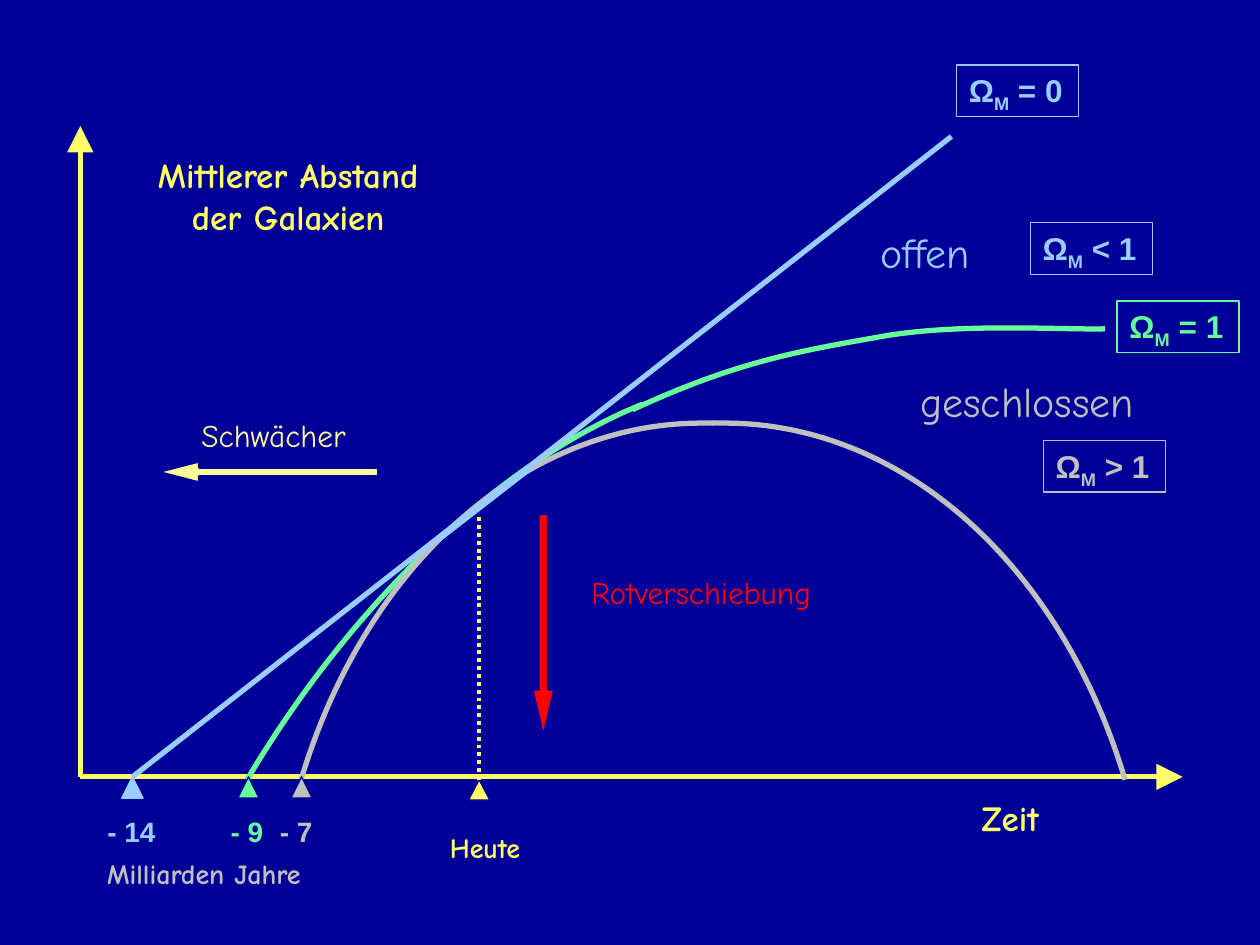
from lxml.etree import SubElement
from pptx import Presentation
from pptx.dml.color import RGBColor
from pptx.enum.dml import MSO_LINE
from pptx.enum.shapes import MSO_CONNECTOR, MSO_SHAPE
from pptx.enum.text import MSO_ANCHOR, MSO_AUTO_SIZE, PP_ALIGN
from pptx.oxml.ns import qn
from pptx.util import Cm, Pt

NAVY = RGBColor(0x00, 0x00, 0x99)
YELLOW = RGBColor(0xFF, 0xFF, 0x66)
PALE = RGBColor(0xFF, 0xFF, 0x99)
RED = RGBColor(0xFF, 0x00, 0x00)
GREEN = RGBColor(0x66, 0xFF, 0x99)
GRAY = RGBColor(0xC0, 0xC0, 0xC0)
BLUE = RGBColor(0x99, 0xCC, 0xFF)

# All lengths are in centimetres.
LEFT, BASE = 1.62, 15.66
TODAY = 9.66
MARK = 0.43

# text, box, colour, size, bold, centred, wrapped
LABELS = [
    ("Mittlerer Abstand der Galaxien", (2.33, 2.97, 6.96, 1.96), YELLOW, 20, True, True, True),
    ("Heute", (8.82, 16.61, 2.13, 0.94), YELLOW, 16, True, False, False),
    ("Schwächer", (3.81, 8.26, 3.76, 1.02), PALE, 18, False, False, False),
    ("Rotverschiebung", (11.43, 11.43, 5.41, 1.02), RED, 18, False, True, False),
    ("Zeit", (19.4, 15.94, 1.93, 1.09), YELLOW, 20, True, True, False),
    ("geschlossen", (18.3, 7.44, 5.21, 1.3), GRAY, 24, False, False, False),
    ("offen", (17.5, 4.45, 2.74, 1.3), BLUE, 24, False, False, False),
    ("Milliarden Jahre", (1.91, 17.15, 5.03, 0.94), GRAY, 16, True, False, False),
]
# relation, left, top, colour
OMEGAS = [
    (" = 1", 22.52, 6.07, GREEN),
    (" > 1", 21.03, 8.88, GRAY),
    (" < 1", 20.77, 4.49, BLUE),
    (" = 0", 19.28, 1.31, BLUE),
]
# Each curve: a start, then two controls and an end for every arc
CURVES = [
    (GREEN, [(12.75, 8.26), (14.78, 7.32), (16.03, 7.09), (17.63, 6.81),
             (19.23, 6.5), (21.31, 6.65), (22.28, 6.63)]),
    (GREEN, [(12.95, 8.15), (10.11, 9.3), (7.14, 12.09), (4.98, 15.72)]),
    (GRAY, [(14.38, 8.53), (14.3, 8.53), (14.22, 8.53), (14.15, 8.53),
            (10.57, 8.53), (7.37, 11.38), (6.07, 15.72)]),
    (GRAY, [(14.35, 8.53), (14.43, 8.53), (14.53, 8.53), (14.61, 8.53),
            (18.19, 8.53), (21.39, 11.38), (22.68, 15.72)]),
]
# age, mark centre, label centre, label width, colour, outline
AGES = [
    ("- 14", 2.67, 2.65, 1.5, BLUE, BLUE),
    ("- 9", 5.01, 4.98, 1.17, GREEN, NAVY),
    ("- 7", 6.08, 5.97, 1.17, GRAY, NAVY),
]


def write(shape, text, color, size=18, font="Comic Neue", bold=False,
          center=False, wrap=False, sub=None):
    """Fill a shape with runs; the run equal to sub is set as a subscript."""
    frame = shape.text_frame
    frame.word_wrap = wrap
    frame.auto_size = MSO_AUTO_SIZE.SHAPE_TO_FIT_TEXT
    frame.vertical_anchor = MSO_ANCHOR.TOP
    para = frame.paragraphs[0]
    para.alignment = PP_ALIGN.CENTER if center else PP_ALIGN.LEFT
    for part in [text] if isinstance(text, str) else text:
        run = para.add_run()
        run.text = part
        run.font.name, run.font.size, run.font.bold = font, Pt(size), bold
        run.font.color.rgb = color
        if part == sub:
            run.font._element.set("baseline", "-25000")


def add_label(slide, text, box, color, **style):
    write(slide.shapes.add_textbox(*map(Cm, box)), text, color, **style)


def dress(form, fill, edge, width):
    form.shadow.inherit = False
    if fill is None:
        form.fill.background()
    else:
        form.fill.solid()
        form.fill.fore_color.rgb = fill
    form.line.color.rgb = edge
    form.line.width = Pt(width)
    return form


def add_form(slide, kind, box, fill, edge, width=0.75):
    return dress(slide.shapes.add_shape(kind, *map(Cm, box)), fill, edge, width)


def add_line(slide, start, end, color, width=3, dash=None, arrow=False):
    line = slide.shapes.add_connector(MSO_CONNECTOR.STRAIGHT, *map(Cm, start + end))
    line.line.color.rgb = color
    line.line.width = Pt(width)
    if dash:
        line.line.dash_style = dash
    if arrow:
        SubElement(line.line._get_or_add_ln(), qn("a:tailEnd"),
                   type="triangle", w="lg", len="lg")
    SubElement(line._element.spPr, qn("a:effectLst"))


def add_curve(slide, color, knots):
    """Draw the knots as a freeform and turn each three legs into one cubic arc."""
    pen = slide.shapes.build_freeform(*map(Cm, knots[0]))
    pen.add_line_segments([tuple(map(Cm, knot)) for knot in knots[1:]], close=False)
    curve = dress(pen.convert_to_shape(), None, color, 3)
    trace = next(curve._element.iter(qn("a:moveTo"))).getparent()
    legs = trace.findall(qn("a:lnTo"))
    for i in range(0, len(legs), 3):
        arc = SubElement(trace, qn("a:cubicBezTo"))
        for leg in legs[i:i + 3]:
            arc.append(leg[0])
            trace.remove(leg)


def main():
    deck = Presentation()
    deck.slide_width, deck.slide_height = Cm(25.4), Cm(19.05)
    slide = deck.slides.add_slide(deck.slide_layouts[6])
    slide.background.fill.solid()
    slide.background.fill.fore_color.rgb = NAVY

    for end in [(LEFT, 2.54), (23.84, BASE)]:
        add_line(slide, (LEFT, BASE), end, YELLOW, arrow=True)
    for text, box, color, size, bold, center, wrap in LABELS:
        add_label(slide, text, box, color, size=size, bold=bold, center=center, wrap=wrap)

    add_form(slide, MSO_SHAPE.ISOSCELES_TRIANGLE,
             (TODAY - MARK / 2, 15.72, MARK, 0.41), YELLOW, NAVY)
    add_line(slide, (TODAY, 15.72), (TODAY, 10.36), YELLOW, 2.25, MSO_LINE.ROUND_DOT)
    for kind, box, color, width, head in [
        (MSO_SHAPE.LEFT_ARROW, (3.18, 9.3, 4.45, MARK), PALE, 1.5, 1.94),
        (MSO_SHAPE.DOWN_ARROW, (10.74, 10.37, MARK, 4.45), RED, 1, 2.13),
    ]:
        arrow = add_form(slide, kind, box, color, NAVY, width)
        arrow.adjustments[0], arrow.adjustments[1] = 0.42, head

    for color, knots in CURVES:
        add_curve(slide, color, knots)
    add_line(slide, (2.67, BASE), (19.18, 2.75), BLUE)
    add_line(slide, (8.81, 10.9), (10.72, 9.42), BLUE)

    for text, left, top, color in OMEGAS:
        box = add_form(slide, MSO_SHAPE.RECTANGLE, (left, top, 2.46, 1.04), None, color)
        write(box, ("Ω", "M", text), color, font="Arial", bold=True, sub="M")
    for text, mark, mid, width, color, edge in AGES:
        add_form(slide, MSO_SHAPE.ISOSCELES_TRIANGLE,
                 (mark - MARK / 2, BASE, MARK, MARK), color, edge)
        add_label(slide, text, (mid - width / 2, 16.3, width, 0.94), color,
                  size=16, font="Arial", bold=True, center=True)
    deck.save("out.pptx")


if __name__ == "__main__":
    main()
